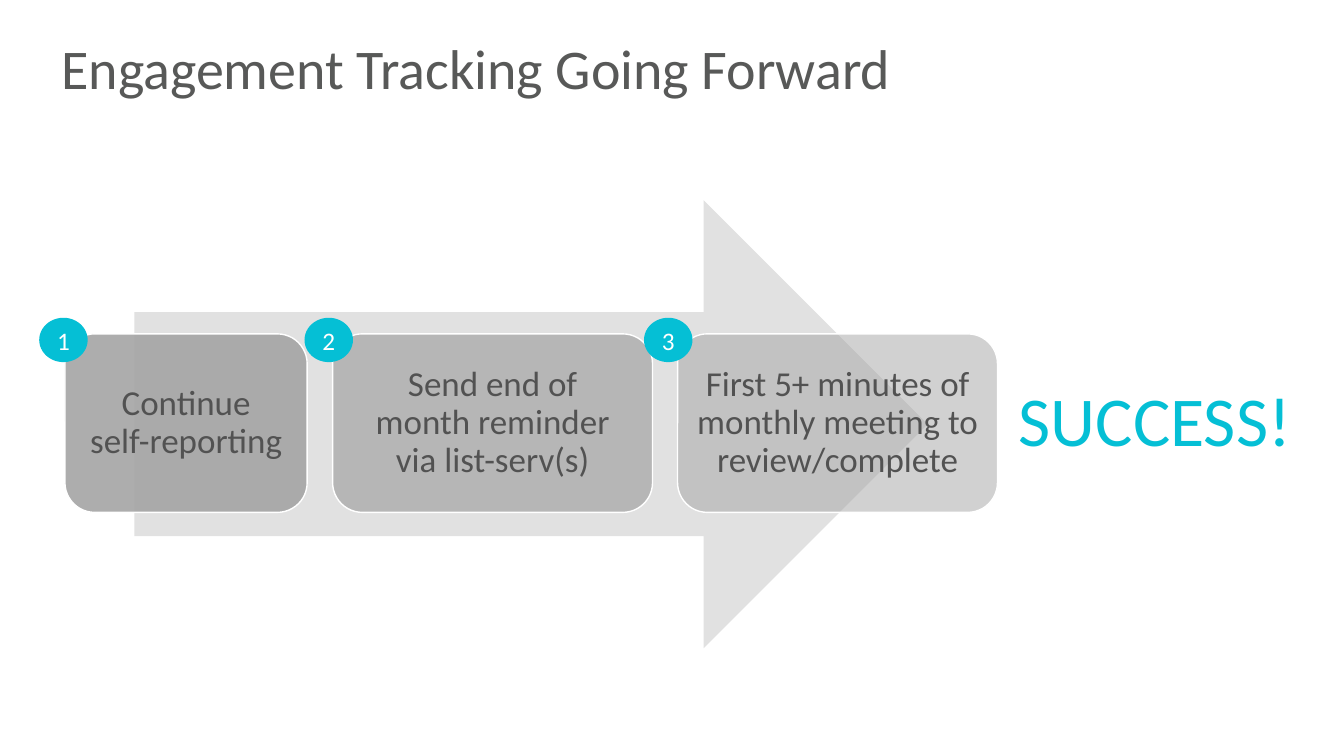
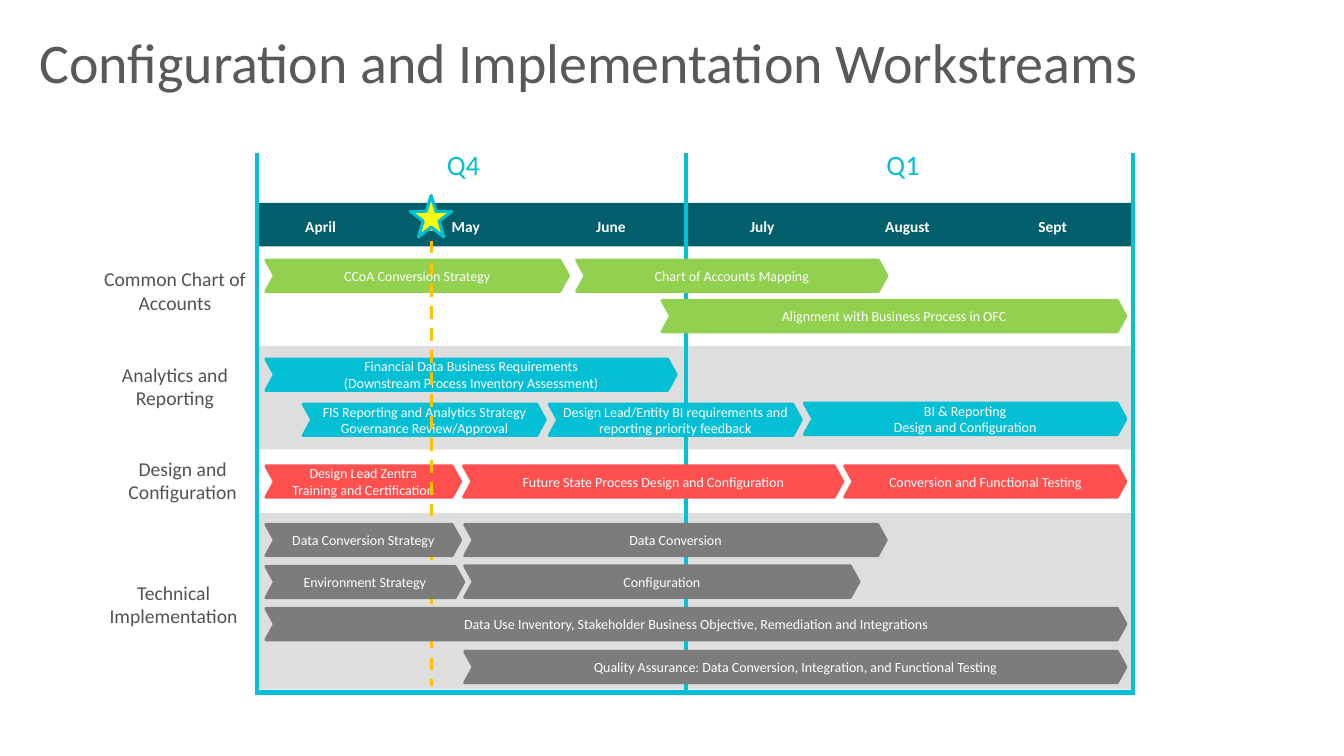
from dataclasses import dataclass

from lxml import etree
from pptx import Presentation
from pptx.dml.color import RGBColor
from pptx.enum import dml, shapes, text
from pptx.oxml import ns
from pptx.util import Pt

KIND = shapes.MSO_SHAPE
MID, TOP = text.MSO_ANCHOR.MIDDLE, text.MSO_ANCHOR.TOP
LEFT, CENTER = text.PP_ALIGN.LEFT, text.PP_ALIGN.CENTER


# Colours and type sizes
@dataclass(frozen=True)
class Theme:
    font: str = "Calibri"
    title: str = "585958"
    body: str = "525252"
    white: str = "FFFFFF"
    cyan: str = "05BFD5"
    teal: str = "025F6B"
    green: str = "92D050"
    red: str = "FF5050"
    gray: str = "7C7C7C"
    band: str = "DEDEDE"
    arrow: str = "E1E1E1"
    step: str = "A5A5A5"
    amber: str = "FFC000"
    yellow: str = "FFFF00"
    head: int = 40
    shout: int = 50
    large: int = 25
    term: int = 20
    badge: int = 18
    label: int = 14
    month: int = 11
    small: int = 10


T = Theme()


# Element helpers
def write(frame, words, size, color, align=CENTER, anchor=MID,
          inset=(7.2, 3.6), bold=False, lead=None):
    frame.word_wrap = True
    frame.auto_size = text.MSO_AUTO_SIZE.NONE
    frame.vertical_anchor = anchor
    frame.margin_left = frame.margin_right = Pt(inset[0])
    frame.margin_top = frame.margin_bottom = Pt(inset[1])
    frame.text = words
    for para in frame.paragraphs:
        para.alignment = align
        if lead:
            para.line_spacing = lead
        for run in para.runs:
            font = run.font
            font.name, font.size, font.bold = T.font, Pt(size), bold
            font.color.rgb = RGBColor.from_string(color)


def draw(slide, kind, box, fill, edge=None, width=1, alpha=None):
    shape = slide.shapes.add_shape(kind, *map(Pt, box))
    shape.shadow.inherit = False
    shape.fill.solid()
    shape.fill.fore_color.rgb = RGBColor.from_string(fill)
    if alpha:
        tint = shape.fill._xPr.find(".//" + ns.qn("a:srgbClr"))
        etree.SubElement(tint, ns.qn("a:alpha")).set("val", str(alpha * 1000))
    if edge:
        shape.line.color.rgb = RGBColor.from_string(edge)
        shape.line.width = Pt(width)
    else:
        shape.line.fill.background()
    return shape


def label(slide, box, words, size, color, **style):
    area = slide.shapes.add_textbox(*map(Pt, box))
    write(area.text_frame, words, size, color, **style)


def rule(slide, ends, color, width, dash=None):
    line = slide.shapes.add_connector(shapes.MSO_CONNECTOR.STRAIGHT, *map(Pt, ends))
    line.line.color.rgb = RGBColor.from_string(color)
    line.line.width = Pt(width)
    if dash:
        line.line.dash_style = dash
    etree.SubElement(line._element.spPr, ns.qn("a:effectLst"))


def start(deck, words, left, top):
    slide = deck.slides.add_slide(deck.slide_layouts[5])
    title = slide.shapes.title
    title.left, title.top, title.width, title.height = map(Pt, (left, top, 889, 59))
    write(title.text_frame, words, T.head, T.title, align=LEFT, anchor=TOP, lead=0.9)
    return slide


def task(slide, left, right, top, color, words):
    bar = draw(slide, KIND.CHEVRON, (left, top, right - left, 22.3), color, color, 2.25)
    bar.adjustments[0] = 0.275
    write(bar.text_frame, words, T.small, T.white, inset=(3.6, 3.6))


# Slide 1: three steps on an arrow
def steps(deck):
    slide = start(deck, "Engagement Tracking Going Forward", 36.7, 26)
    draw(slide, KIND.RIGHT_ARROW, (96, 143, 566.6, 320), T.arrow)
    items = (
        (46.4, 173, 90, 28, "Continue\vself-reporting"),
        (237.6, 228.5, 70, 217.5, "Send end of\vmonth reminder\vvia list-serv(s)"),
        (484, 228.5, 50, 460, "First 5+ minutes of monthly meeting to review/complete"),
    )
    for left, width, alpha, _, words in items:
        card = draw(slide, KIND.ROUNDED_RECTANGLE, (left, 238.5, width, 127.5),
                    T.step, T.white, alpha=alpha)
        write(card.text_frame, words, T.large, T.body, inset=(7, 7), lead=0.9)
    label(slide, (720.7, 265.7, 235, 67.7), "SUCCESS!", T.shout, T.cyan,
          align=LEFT, anchor=TOP)
    for count, item in enumerate(items, 1):
        dot = draw(slide, KIND.FLOWCHART_CONNECTOR, (item[3], 227, 34.6, 31.7), T.cyan)
        write(dot.text_frame, str(count), T.badge, T.white, inset=(0, 0))


# Slide 2: workstream timeline
def plan(deck):
    slide = start(deck, "Configuration and Implementation Workstreams", 21, 21.6)
    left, mid, right, top, base = 183.5, 490.3, 809.3, 109.5, 494.6
    span = right - left

    # Bands and frame
    for y, height, fill in ((247, 74, T.band), (366.5, 126, T.band), (145, 31, T.teal)):
        draw(slide, KIND.RECTANGLE, (left, y, span, height), fill)
    for x in (left, mid, right):
        rule(slide, (x, top, x, base), T.cyan, 3)
    rule(slide, (left - 1.5, base, right + 1.5, base), T.cyan, 3)

    # Quarters and months
    quarters = (
        ("Q4", 331, 229, ("April", "May", "June")),
        ("Q1", 645, 544.5, ("July", "August", "Sept")),
    )
    for name, center, first, months in quarters:
        label(slide, (center - 91, 102.2, 182, 31), name, T.term, T.cyan)
        for i, month in enumerate(months):
            label(slide, (first + 103.7 * i - 30, 151.4, 60, 21), month, T.month,
                  T.white, anchor=TOP, bold=True)

    # Stream names
    for center, y, words in (
        (125, 187.2, "Common Chart of Accounts"),
        (125, 255.6, "Analytics and Reporting"),
        (130.5, 322.6, "Design and Configuration"),
        (124, 411.1, "Technical Implementation"),
    ):
        label(slide, (center - 59, y, 118, 42.5), words, T.label, T.body, anchor=TOP)

    # Tasks: left, right, top, words
    first, last = 190, 804.2
    streams = (
        (T.green, (
            (first, 406, 185.8, "CCoA Conversion Strategy"),
            (412, 633.5, 185.8, "Chart of Accounts Mapping"),
            (473, last, 214.6, "Alignment with Business Process in OFC"),
        )),
        (T.cyan, (
            (first, 483, 256.5,
             "Financial Data Business Requirements\v(Downstream Process Inventory Assessment)"),
            (216.7, 389.5, 288.7,
             "FIS Reporting and Analytics Strategy Governance Review/Approval"),
            (392.4, 572.4, 288.7,
             "Design Lead/Entity BI requirements and reporting priority feedback"),
            (574.6, last, 288, "BI & Reporting\nDesign and Configuration"),
        )),
        (T.red, (
            (first, 329, 332.8, "Design Lead Zentra\vTraining and Certification"),
            (331.2, 602, 332.8, "Future State Process Design and Configuration"),
            (603.4, last, 332.8, "Conversion and Functional Testing"),
        )),
        (T.gray, (
            (first, 329, 374.6, "Data Conversion Strategy"),
            (332, 633, 374.6, "Data Conversion"),
            (first, 331.2, 404.6, "Environment Strategy"),
            (332, 613.5, 404.3, "Configuration"),
            (first, last, 434.6, "Data Use Inventory, Stakeholder Business Objective, "
                                 "Remediation and Integrations"),
            (332, last, 465.3, "Quality Assurance: Data Conversion, Integration, "
                               "and Functional Testing"),
        )),
    )
    for color, tasks in streams:
        if color == T.gray:  # the today marker lies beneath the last stream
            rule(slide, (308, 140.5, 308, 489.8), T.amber, 2.25, dml.MSO_LINE.DASH)
            draw(slide, KIND.STAR_5_POINT, (293.2, 139.7, 29.6, 29.6),
                 T.yellow, T.cyan, 2.25)
        for start_x, end_x, y, words in tasks:
            task(slide, start_x, end_x, y, color, words)


def main():
    deck = Presentation()
    deck.slide_width, deck.slide_height = Pt(960), Pt(540)
    steps(deck)
    plan(deck)
    deck.save("out.pptx")


if __name__ == "__main__":
    main()
